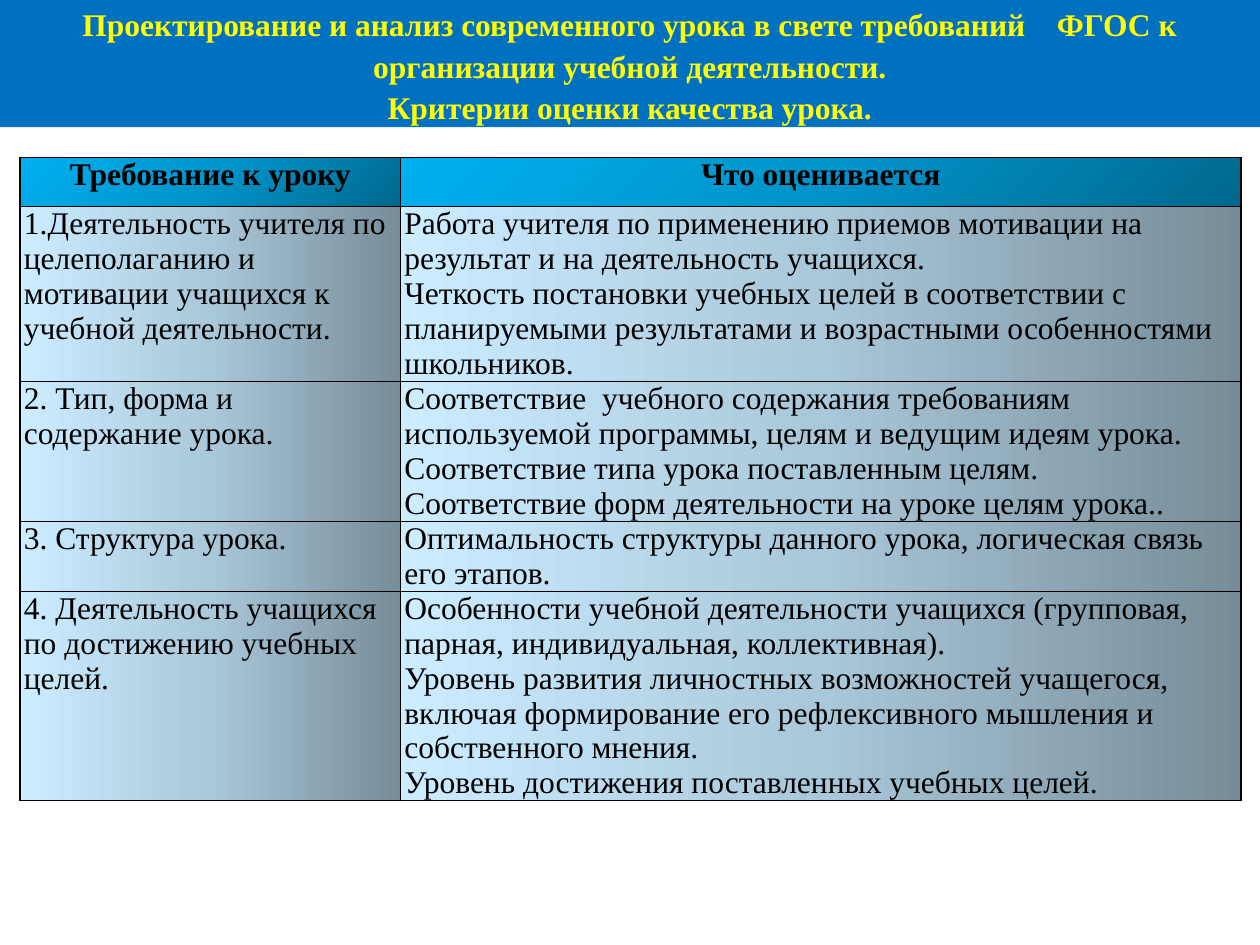
from typing import NamedTuple

import pptx
import pptx.dml.color
import pptx.enum.shapes
import pptx.enum.text
import pptx.oxml.ns
import pptx.util
from lxml import etree

Inches = pptx.util.Inches
Pt = pptx.util.Pt
qn = pptx.oxml.ns.qn
CENTER = pptx.enum.text.PP_ALIGN.CENTER
LEFT = pptx.enum.text.PP_ALIGN.LEFT

FONT = "Times New Roman"
HEADER_STOPS = ("00688E", "0094CA", "00B0F0")
BODY_STOPS = ("778C99", "A9C8DA", "CCECFF")
COLUMN_WIDTHS = (3.02, 6.67)


class Row(NamedTuple):
    height: float
    requirement: str
    criteria: list[str]
    header: bool = False


TITLE = [
    "Проектирование и анализ современного урока в свете требований    ФГОС к "
    "организации учебной деятельности.",
    "Критерии оценки качества урока.",
]
ROWS = [
    Row(0.39, "Требование к уроку", ["Что оценивается"], header=True),
    Row(1.39, "1.Деятельность учителя по целеполаганию и мотивации учащихся к "
        "учебной деятельности.", [
            "Работа учителя по применению приемов мотивации на результат и на "
            "деятельность учащихся.",
            "Четкость постановки учебных целей в соответствии с планируемыми "
            "результатами и возрастными особенностями школьников."]),
    Row(1.11, "2. Тип, форма и содержание урока.", [
        "Соответствие  учебного содержания требованиям используемой программы, "
        "целям и ведущим идеям урока.",
        "Соответствие типа урока поставленным целям.",
        "Соответствие форм деятельности на уроке целям урока.."]),
    Row(0.55, "3. Структура урока.", [
        "Оптимальность структуры данного урока, логическая связь его этапов."]),
    Row(1.66, "4. Деятельность учащихся по достижению учебных целей.", [
        "Особенности учебной деятельности учащихся (групповая, парная, "
        "индивидуальная, коллективная).",
        "Уровень развития личностных возможностей учащегося, включая "
        "формирование его рефлексивного мышления и собственного мнения.",
        "Уровень достижения поставленных учебных целей."]),
]


def rgb(color: str) -> pptx.dml.color.RGBColor:
    return pptx.dml.color.RGBColor.from_string(color)


def write(tf, lines: list[str], color: str, bold: bool, align, spacing=None) -> None:
    for i, line in enumerate(lines):
        p = tf.paragraphs[0] if i == 0 else tf.add_paragraph()
        p.text = line
        p.alignment = align
        p.line_spacing = spacing
        p.font.name = FONT
        p.font.size = Pt(18)
        p.font.bold = bold
        p.font.color.rgb = rgb(color)


def sub(parent, tag: str, **attrs: str):
    return etree.SubElement(parent, qn(tag), attrs)


def add_borders(tcPr) -> None:
    for side in ("L", "R", "T", "B"):
        ln = sub(tcPr, f"a:ln{side}", w=str(Pt(1)))
        sub(sub(ln, "a:solidFill"), "a:srgbClr", val="000000")


def add_gradient(tcPr, header: bool) -> None:
    """Radial from the lower right corner for the header, else right to left."""
    grad = sub(tcPr, "a:gradFill", rotWithShape="1")
    stops = sub(grad, "a:gsLst")
    for i, color in enumerate(HEADER_STOPS if header else BODY_STOPS):
        sub(sub(stops, "a:gs", pos=str(i * 50000)), "a:srgbClr", val=color)
    if header:
        circle = sub(grad, "a:path", path="circle")
        sub(circle, "a:fillToRect", l="100000", t="100000")
    else:
        sub(grad, "a:lin", ang="10800000", scaled="1")


def fill_cell(cell, lines: list[str], header: bool) -> None:
    cell.margin_left = cell.margin_right = Inches(0.03)
    cell.margin_top = cell.margin_bottom = 0
    write(cell.text_frame, lines, "000000", header, CENTER if header else LEFT)
    tcPr = cell._tc.get_or_add_tcPr()
    add_borders(tcPr)
    add_gradient(tcPr, header)


def add_criteria_table(s, rows: list[Row]) -> None:
    table = s.shapes.add_table(
        len(rows), len(COLUMN_WIDTHS), Inches(0.16), Inches(1.25),
        Inches(sum(COLUMN_WIDTHS)), Inches(sum(row.height for row in rows))).table
    table.first_row = table.horz_banding = False
    for column, width in zip(table.columns, COLUMN_WIDTHS):
        column.width = Inches(width)
    for i, row in enumerate(rows):
        table.rows[i].height = Inches(row.height)
        fill_cell(table.cell(i, 0), [row.requirement], row.header)
        fill_cell(table.cell(i, 1), row.criteria, row.header)


def add_title_band(s, lines: list[str]) -> None:
    sp = s.shapes.add_shape(pptx.enum.shapes.MSO_SHAPE.RECTANGLE,
                            0, 0, Inches(10), Inches(1.01))
    sp.shadow.inherit = False
    sp.fill.solid()
    sp.fill.fore_color.rgb = rgb("0070C0")
    sp.line.fill.background()
    tf = sp.text_frame
    tf.word_wrap = True
    tf.vertical_anchor = pptx.enum.text.MSO_ANCHOR.MIDDLE
    write(tf, lines, "FFFF00", True, CENTER, spacing=1.1)


def main() -> None:
    prs = pptx.Presentation()
    prs.slide_width, prs.slide_height = Inches(10), Inches(7.5)
    s = prs.slides.add_slide(prs.slide_layouts[6])
    add_criteria_table(s, ROWS)
    add_title_band(s, TITLE)
    prs.save("out.pptx")


if __name__ == "__main__":
    main()
